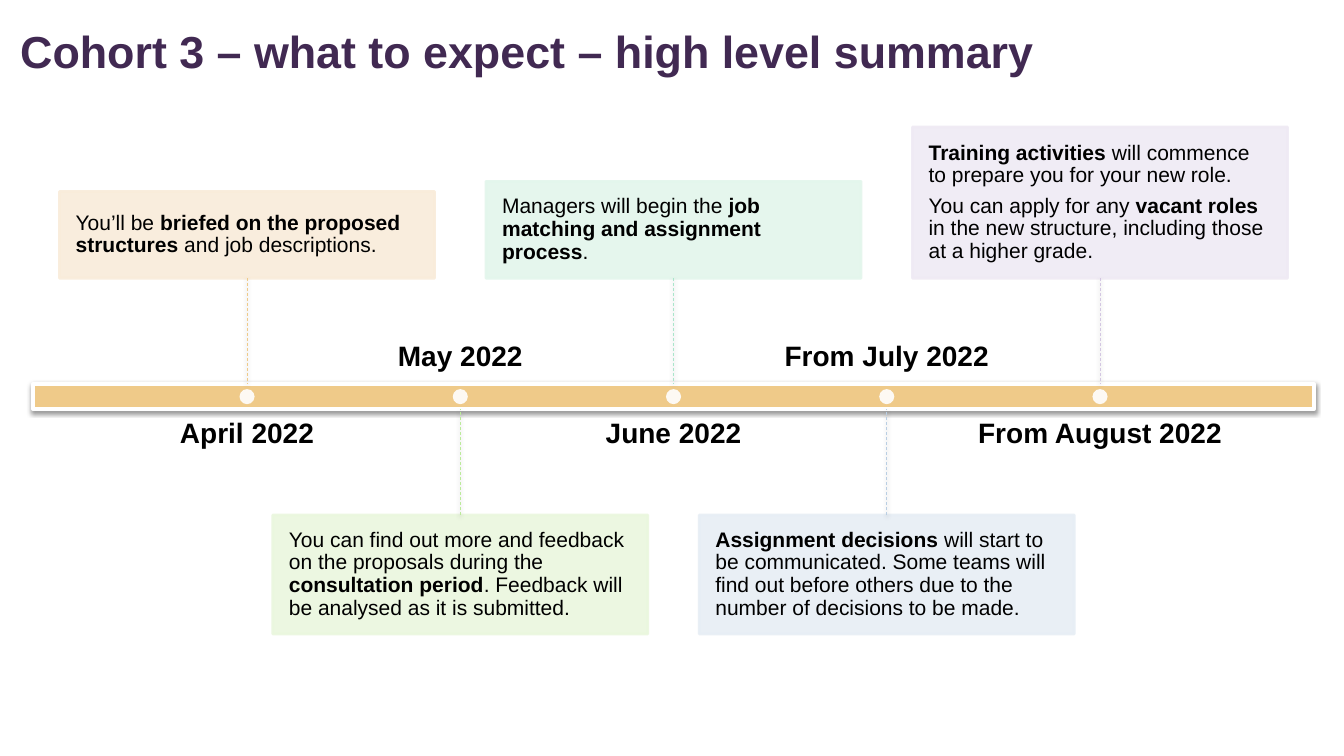
from lxml import etree
from pptx import Presentation
from pptx import util as u
from pptx.dml.color import RGBColor
from pptx.enum import dml, shapes, text
from pptx.oxml.ns import qn

BAR_X, BAR_Y, BAR_W, BAR_H = 0.33, 3.81, 12.7, 0.25
CARD_W, LABEL_W, LABEL_H, DOT = 3.72, 3.38, 0.69, 0.15
FIRST_X, STEP, GAP = 2.45, 2.115, 1.05

MILESTONES = [
    ("April 2022", 0.86, "F9ECDA", "EFCA89",
     ["You’ll be *briefed on the proposed structures *and job descriptions."]),
    ("May 2022", 1.18, "EAF7DE", "BBEA9A",
     ["You can find out more and feedback on the proposals during the "
      "*consultation period*. Feedback will be analysed as it is submitted."]),
    ("June 2022", 0.96, "E3F6EC", "AAE6CB",
     ["Managers will begin the *job matching and assignment process*."]),
    ("From July 2022", 1.18, "E7EEF5", "B9CEE3",
     ["*Assignment decisions *will start to be communicated. Some teams will "
      "find out before others due to the number of decisions to be made."]),
    ("From August 2022", 1.5, "EFEAF4", "D3C6E2",
     ["*Training activities *will commence to prepare you for your new role.",
      "You can apply for any *vacant roles *in the new structure, "
      "including those at a higher grade."]),
]


def rgb(color):
    return RGBColor.from_string(color)


def inches(*values):
    return [u.Inches(v) for v in values]


def set_alpha(sp, percent):
    for clr in sp._element.spPr.iter(qn("a:srgbClr")):
        etree.SubElement(clr, qn("a:alpha"), val=str(percent * 1000))


def add_shadow(sp):
    spPr = sp._element.spPr
    for old in spPr.findall(qn("a:effectLst")):
        spPr.remove(old)
    effects = etree.SubElement(spPr, qn("a:effectLst"))
    shadow = etree.SubElement(effects, qn("a:outerShdw"), blurRad=str(u.Pt(3.1)),
                              dist=str(u.Pt(1.6)), dir="5400000", rotWithShape="0")
    clr = etree.SubElement(shadow, qn("a:srgbClr"), val="000000")
    etree.SubElement(clr, qn("a:alpha"), val="38000")


def add_box(s, kind, box, fill, line=None, width=0):
    sp = s.shapes.add_shape(kind, *inches(*box))
    sp.shadow.inherit = False
    sp.fill.solid()
    sp.fill.fore_color.rgb = rgb(fill)
    if line:
        sp.line.color.rgb = rgb(line)
        sp.line.width = u.Pt(width)
    else:
        sp.line.fill.background()
    return sp


def write(sp, paragraphs, size, color="000000", bold=False, align="LEFT",
          anchor="MIDDLE", inset=0, spacing=0.9, after=0.35):
    tf = sp.text_frame
    tf.word_wrap = True
    tf.vertical_anchor = text.MSO_ANCHOR[anchor]
    tf.margin_left = tf.margin_top = tf.margin_right = tf.margin_bottom = u.Inches(inset)
    for i, content in enumerate(paragraphs):
        p = tf.add_paragraph() if i else tf.paragraphs[0]
        p.alignment = text.PP_ALIGN[align]
        p.line_spacing = spacing
        p.space_after = u.Pt(size * after)
        for j, part in enumerate(content.split("*")):
            if part:
                r = p.add_run()
                r.text = part
                r.font.name = "Arial"
                r.font.size = u.Pt(size)
                r.font.bold = bold or j % 2 == 1
                r.font.color.rgb = rgb(color)


def add_title(s, box):
    sp = s.shapes.add_textbox(*inches(*box))
    write(sp, ["Cohort 3 – what to expect – high level summary"], 32,
          color="412952", bold=True, spacing=1.0, after=0)


def add_milestone(s, bar, cx, above, label, height, fill, line, body):
    bar_bottom = BAR_Y + BAR_H
    edge = BAR_Y if above else bar_bottom
    card_y = BAR_Y - GAP - height if above else bar_bottom + GAP
    label_y = bar_bottom + 0.1 if above else BAR_Y - 0.11 - LABEL_H

    sp = s.shapes.add_textbox(*inches(cx - LABEL_W / 2, label_y, LABEL_W, LABEL_H))
    write(sp, [label], 20, bold=True, align="CENTER",
          anchor="TOP" if above else "BOTTOM")

    card = add_box(s, shapes.MSO_SHAPE.RECTANGLE,
                   (cx - CARD_W / 2, card_y, CARD_W, height), fill, fill, 2)
    set_alpha(card, 90)
    write(card, body, 15, inset=0.16)

    cn = s.shapes.add_connector(shapes.MSO_CONNECTOR.STRAIGHT,
                                *inches(cx, edge, cx, edge))
    cn.begin_connect(card, 2 if above else 0)
    if abs(cx - BAR_X - BAR_W / 2) < 0.01:
        cn.end_connect(bar, 0 if above else 2)
    cn.line.color.rgb = rgb(line)
    cn.line.width = u.Pt(0.5)
    cn.line.dash_style = dml.MSO_LINE.DASH
    add_shadow(cn)

    dot = add_box(s, shapes.MSO_SHAPE.OVAL,
                  (cx - DOT / 2, BAR_Y + (BAR_H - DOT) / 2, DOT, DOT), "FFFFFF")
    set_alpha(dot, 90)


def add_timeline(s, box):
    bar = add_box(s, shapes.MSO_SHAPE.RECTANGLE, box, "EFCA89", "FFFFFF", 3)
    add_shadow(bar)
    for i, milestone in enumerate(MILESTONES):
        add_milestone(s, bar, FIRST_X + i * STEP, i % 2 == 0, *milestone)


def main():
    prs = Presentation()
    prs.slide_width, prs.slide_height = inches(13.33, 7.5)
    s = prs.slides.add_slide(prs.slide_layouts[6])
    add_timeline(s, (BAR_X, BAR_Y, BAR_W, BAR_H))
    add_title(s, (0.2, 0.15, 11.78, 0.7))
    prs.save("out.pptx")


if __name__ == "__main__":
    main()
